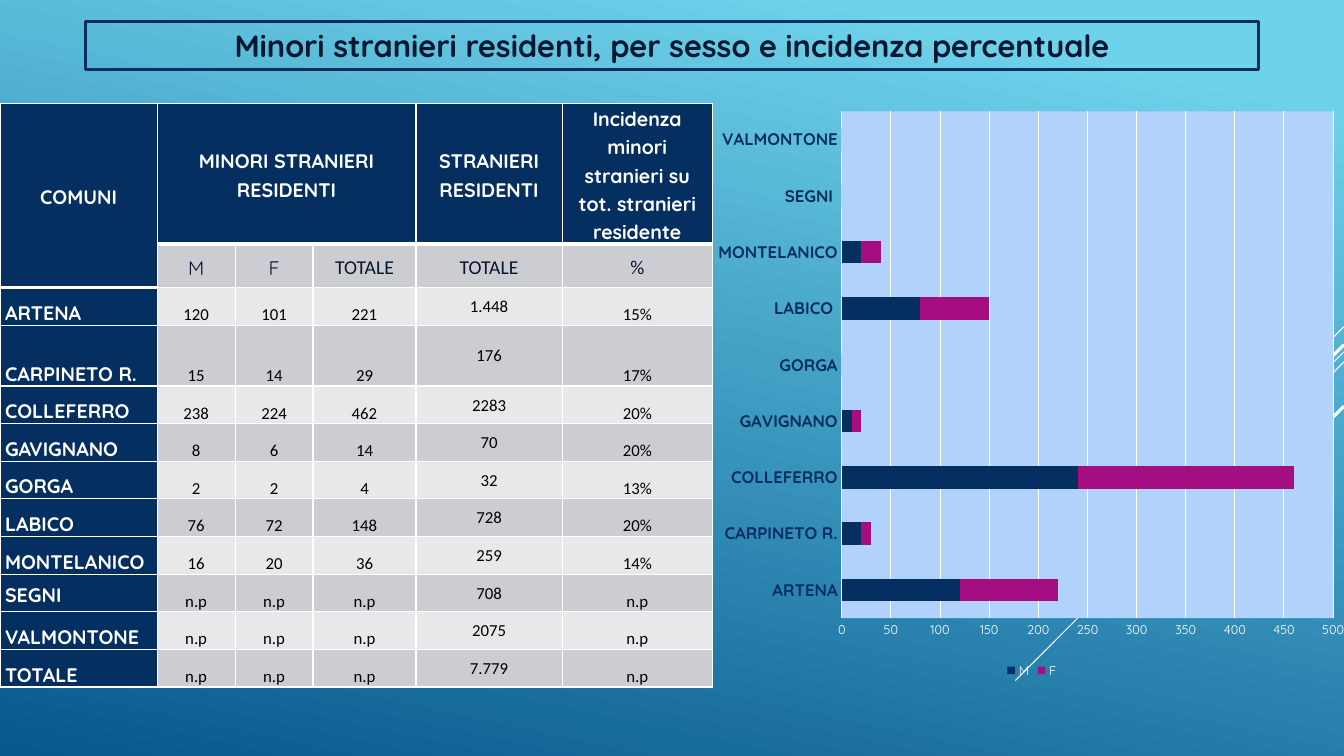
from pptx import Presentation, util as u
from pptx.chart import data as chart_data
from pptx.dml.color import RGBColor
from pptx.enum import chart as charts, shapes, text
from pptx.oxml import ns, parse_xml

NAVY = RGBColor(0x05, 0x2F, 0x61)
INK = RGBColor(0x03, 0x17, 0x30)
BLACK = RGBColor(0, 0, 0)
WHITE = RGBColor(0xFF, 0xFF, 0xFF)
LIGHT = RGBColor(0xE7, 0xE8, 0xEA)
GREY = RGBColor(0xCC, 0xCD, 0xD2)
PLUM = RGBColor(0xA5, 0x0E, 0x82)
PALE_BLUE = RGBColor(0xB1, 0xD3, 0xFB)
SKY = RGBColor(0x6E, 0xD2, 0xEB)
DEEP = RGBColor(0x06, 0x58, 0x8E)
HEAD_FONT, BODY_FONT = "Quicksand", "Calibri"
CENTER, LEFT = text.PP_ALIGN.CENTER, text.PP_ALIGN.LEFT
MIDDLE, BOTTOM = text.MSO_ANCHOR.MIDDLE, text.MSO_ANCHOR.BOTTOM

COLUMNS = [112.3, 55.7, 55.7, 73.5, 104.5, 107.3]
HEADINGS = ["COMUNI", "MINORI STRANIERI RESIDENTI", None, None, "STRANIERI RESIDENTI",
            "Incidenza minori stranieri su tot. stranieri residente"]
SUBHEADINGS = [None, "M", "F", "TOTALE", "TOTALE", "%"]
TOWNS = [
    ("ARTENA", "120", "101", "221", "1.448", "15%"),
    ("CARPINETO R.", "15", "14", "29", "176", "17%"),
    ("COLLEFERRO", "238", "224", "462", "2283", "20%"),
    ("GAVIGNANO", "8", "6", "14", "70", "20%"),
    ("GORGA", "2", "2", "4", "32", "13%"),
    ("LABICO", "76", "72", "148", "728", "20%"),
    ("MONTELANICO", "16", "20", "36", "259", "14%"),
    ("SEGNI", "n.p", "n.p", "n.p", "708", "n.p"),
    ("VALMONTONE", "n.p", "n.p", "n.p", "2075", "n.p"),
]
TOTALS = ("TOTALE", "n.p", "n.p", "n.p", "7.779", "n.p")


def style_font(font, size, color, name=HEAD_FONT, bold=False):
    font.size, font.name, font.bold = u.Pt(size), name, bold
    font.color.rgb = color


def add_span(para, words, *style):
    span = para.add_run()
    span.text = words
    style_font(span.font, *style)


def paint_background(page):
    fill = page.background.fill
    fill.gradient()
    fill.gradient_angle = 258
    for stop, position, color in zip(fill.gradient_stops, (0.1, 1), (SKY, DEEP)):
        stop.position = position
        stop.color.rgb = color


def add_diagonals(page, right):
    # Each line runs down-left at 45 degrees: start height, run, weight
    for top, run, weight in [(233.3, 72, 0.75), (251.3, 234.7, 0.75), (258.5, 149.5, 0.75),
                             (246.2, 137.5, 2.25), (290.2, 100, 2.25)]:
        line = page.shapes.add_connector(shapes.MSO_CONNECTOR.STRAIGHT, u.Pt(right), u.Pt(top),
                                         u.Pt(right - run), u.Pt(top + run))
        line.line.color.rgb = WHITE
        line.line.width = u.Pt(weight)
        line._element.spPr.append(parse_xml(f"<a:effectLst {ns.nsdecls('a')}/>"))


def place_title(page, left, top, width, height):
    title = page.shapes.title
    title.left, title.top, title.width, title.height = map(u.Pt, (left, top, width, height))
    title.line.color.rgb = NAVY
    title.line.width = u.Pt(2.25)
    frame = title.text_frame
    frame.word_wrap = True
    frame.auto_size = text.MSO_AUTO_SIZE.NONE
    frame.vertical_anchor = MIDDLE
    para = frame.paragraphs[0]
    para.alignment = CENTER
    add_span(para, "Minori stranieri residenti, per sesso e incidenza percentuale",
             22, INK, HEAD_FONT, True)


def dress_cell(cell, fill, top, bottom):
    for side, weight in zip("LRTB", (1, 1, top, bottom)):
        cell._tc.get_or_add_tcPr().append(parse_xml(
            f'<a:ln{side} {ns.nsdecls("a")} w="{u.Pt(weight)}"><a:solidFill>'
            f'<a:srgbClr val="{WHITE}"/></a:solidFill></a:ln{side}>'))
    cell.fill.solid()
    cell.fill.fore_color.rgb = fill


def write_cell(cell, words, style, align, anchor, spaced):
    side = 3.6 if spaced else 0.72
    cell.margin_left = cell.margin_right = u.Pt(side)
    cell.margin_top = u.Pt(0 if spaced else 0.72)
    cell.margin_bottom = u.Pt(0)
    cell.vertical_anchor = anchor
    para = cell.text_frame.paragraphs[0]
    para.alignment = align
    if spaced:
        para.line_spacing = 1.15
        para.space_after = u.Pt(10)
    add_span(para, words, *style)


def add_town_table(page, left, top):
    rows = [HEADINGS, SUBHEADINGS, *TOWNS, TOTALS]
    heights = [93.6, 31] + [43.4 if row[0] == "CARPINETO R." else 26.9 for row in rows[2:]]
    table = page.shapes.add_table(len(rows), len(COLUMNS), u.Pt(left), u.Pt(top),
                                  u.Pt(sum(COLUMNS)), u.Pt(sum(heights))).table
    table.first_row = table.horz_banding = False
    for column, width in zip(table.columns, COLUMNS):
        column.width = u.Pt(width)
    for row, height in zip(table.rows, heights):
        row.height = u.Pt(height)
    table.cell(0, 0).merge(table.cell(1, 0))
    table.cell(0, 1).merge(table.cell(0, 3))

    heading = (14, WHITE, HEAD_FONT, True)
    for r, row in enumerate(rows):
        for c, words in enumerate(row):
            cell = table.cell(r, c)
            dark = r == 0 or c == 0
            fill = NAVY if dark else LIGHT if r % 2 == 0 else GREY
            above = 3 if (r == 1 and c) or (r == 2 and c == 0) else 1
            below = 3 if r == 0 or (r == 1 and c == 0) else 1
            dress_cell(cell, fill, above, below)
            if words is None:
                continue
            if r == 0:
                write_cell(cell, words, heading, CENTER, MIDDLE, True)
            elif r == 1:
                font = HEAD_FONT if c < 3 else BODY_FONT
                write_cell(cell, words, (14, INK, font), CENTER, MIDDLE, True)
            elif c == 0:
                anchor = MIDDLE if words == "SEGNI" else BOTTOM
                write_cell(cell, words, heading, LEFT, anchor, True)
            else:
                anchor = MIDDLE if c == 4 else BOTTOM
                write_cell(cell, words, (12, BLACK, BODY_FONT), CENTER, anchor, False)


def add_town_chart(page, left, top, width, height):
    # Bars show the table's counts to the nearest ten
    data = chart_data.CategoryChartData()
    data.categories = [town[0] + (" " if town[0] in ("LABICO", "SEGNI") else "")
                       for town in TOWNS]
    for column, name in enumerate("MF", 1):
        data.add_series(name, [0 if town[column] == "n.p" else round(int(town[column]), -1)
                               for town in TOWNS])
    chart = page.shapes.add_chart(charts.XL_CHART_TYPE.BAR_STACKED, u.Pt(left), u.Pt(top),
                                  u.Pt(width), u.Pt(height), data).chart
    chart.has_title = False
    style_font(chart.font, 10, WHITE)

    # Bars
    plot = chart.plots[0]
    plot.gap_width, plot.overlap, plot.vary_by_categories = 150, 100, False
    for series, color in zip(plot.series, (NAVY, PLUM)):
        series.format.fill.solid()
        series.format.fill.fore_color.rgb = color

    # Axes
    towns, values = chart.category_axis, chart.value_axis
    for axis in (towns, values):
        axis.major_tick_mark = axis.minor_tick_mark = charts.XL_TICK_MARK.NONE
    style_font(towns.tick_labels.font, 12, NAVY, HEAD_FONT, True)
    style_font(values.tick_labels.font, 9, WHITE)
    values.minimum_scale, values.maximum_scale, values.major_unit = 0, 500, 50
    values.has_major_gridlines = True
    for line in (towns.format.line, values.major_gridlines.format.line):
        line.color.rgb = WHITE
        line.width = u.Pt(0.75)
    values.format.line.fill.background()

    # Legend
    chart.has_legend = True
    chart.legend.position = charts.XL_LEGEND_POSITION.BOTTOM
    chart.legend.include_in_layout = False
    style_font(chart.legend.font, 9, WHITE)

    # Plot area placement and fill
    area = chart.element.find(".//" + ns.qn("c:plotArea"))
    for layout in area.findall(ns.qn("c:layout")):
        area.remove(layout)
    modes = '<c:layoutTarget val="inner"/><c:xMode val="edge"/><c:yMode val="edge"/>'
    spots = '<c:x val="0.21"/><c:y val="0.02"/><c:w val="0.75"/><c:h val="0.87"/>'
    area.insert(0, parse_xml(f'<c:layout {ns.nsdecls("c")}><c:manualLayout>{modes}{spots}'
                             '</c:manualLayout></c:layout>'))
    area.append(parse_xml(f'<c:spPr {ns.nsdecls("c", "a")}><a:solidFill>'
                          f'<a:srgbClr val="{PALE_BLUE}"/></a:solidFill></c:spPr>'))


def main():
    deck = Presentation()
    deck.slide_width, deck.slide_height = u.Pt(960), u.Pt(540)
    page = deck.slides.add_slide(deck.slide_layouts[5])
    paint_background(page)
    add_diagonals(page, 960)
    add_town_table(page, 0, 73.8)
    place_title(page, 61.2, 15.4, 837.5, 34)
    add_town_chart(page, 503, 71.3, 468, 416)
    deck.save("out.pptx")


if __name__ == "__main__":
    main()
